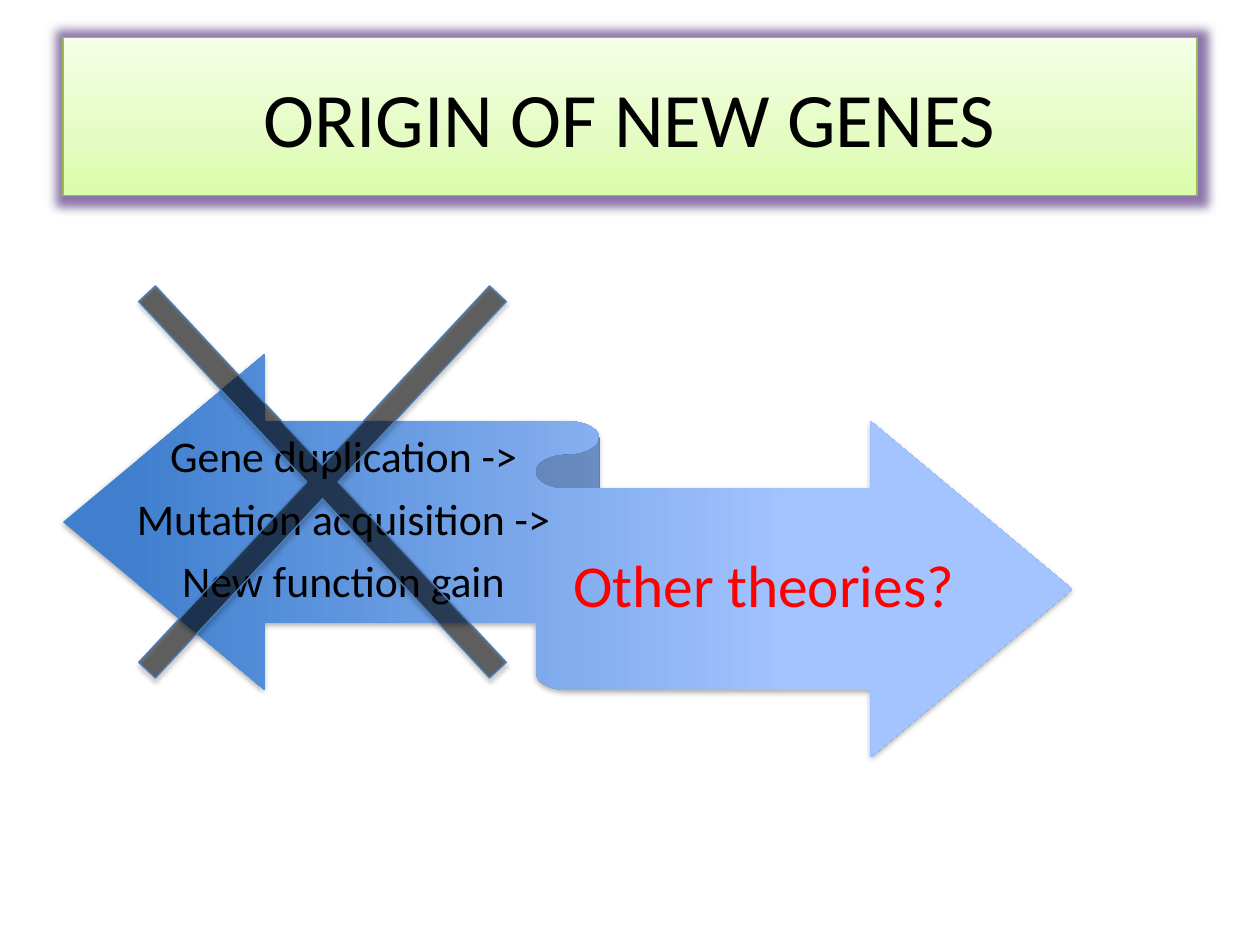
import pptx
import pptx.dml.color
import pptx.enum.shapes
import pptx.enum.text
import pptx.oxml
import pptx.oxml.ns
import pptx.util
from lxml import etree

Inches = pptx.util.Inches
Pt = pptx.util.Pt
RGBColor = pptx.dml.color.RGBColor
MSO_SHAPE = pptx.enum.shapes.MSO_SHAPE
qn = pptx.oxml.ns.qn

BLACK = RGBColor(0x00, 0x00, 0x00)
RED = RGBColor(0xFF, 0x00, 0x00)
GREEN_LINE = RGBColor(0x98, 0xB9, 0x55)
BLUE_LINE = RGBColor(0x4B, 0x7E, 0xBC)
PURPLE_GLOW = RGBColor(0x80, 0x64, 0xA2)
GREEN_STOPS = [
    (0, RGBColor(0xDA, 0xFD, 0xA7)),
    (35, RGBColor(0xE4, 0xFC, 0xC2)),
    (100, RGBColor(0xF5, 0xFF, 0xE7)),
]
BLUE_STOPS = [
    (6, RGBColor(0x3F, 0x7F, 0xCE)),
    (73, RGBColor(0xA4, 0xC4, 0xFF)),
]
SOFT_SHADOW = {"opacity": 35, "blur": 3.1, "distance": 1.8, "direction": 90}
TITLE_SHADOW = {"opacity": 15, "blur": 6, "distance": 0, "direction": 225}


def add_color(parent, color, opacity=100):
    element = etree.SubElement(parent, qn("a:srgbClr"), val=str(color))
    if opacity < 100:
        etree.SubElement(element, qn("a:alpha"), val=str(opacity * 1000))


class SlideBuilder:
    font_name = "Calibri"

    def __init__(self, slide):
        self.slide = slide

    def place(self, shape, left, top, width, height):
        box = {"left": left, "top": top, "width": width, "height": height}
        for name, length in box.items():
            setattr(shape, name, Inches(length))

    def gradient(self, shape, stops, angle):
        shape.fill.gradient()
        shape.fill.gradient_angle = angle
        stop_list = shape.element.spPr.find(".//" + qn("a:gsLst"))
        for stop in list(stop_list):
            stop_list.remove(stop)
        for position, color in stops:
            stop = etree.SubElement(stop_list, qn("a:gs"), pos=str(position * 1000))
            add_color(stop, color)

    def outline(self, shape, color):
        shape.line.color.rgb = color
        shape.line.width = Pt(0.75)

    def effects(self, shape, shadow, glow=None):
        shape.shadow.inherit = False
        effect_list = shape.element.spPr.find(qn("a:effectLst"))
        if glow:
            element = etree.SubElement(effect_list, qn("a:glow"), rad=str(Pt(11)))
            add_color(element, glow, 85)
        element = etree.SubElement(
            effect_list, qn("a:outerShdw"),
            blurRad=str(Pt(shadow["blur"])), dist=str(Pt(shadow["distance"])),
            dir=str(shadow["direction"] * 60000), rotWithShape="0")
        add_color(element, BLACK, shadow["opacity"])

    def set_text(self, shape, lines, size, color, **paragraph_format):
        frame = shape.text_frame
        frame.word_wrap = True
        frame.vertical_anchor = pptx.enum.text.MSO_ANCHOR.MIDDLE
        frame.text = "\n".join(lines)
        for paragraph in frame.paragraphs:
            paragraph.alignment = pptx.enum.text.PP_ALIGN.CENTER
            for name, value in paragraph_format.items():
                setattr(paragraph, name, value)
            for run in paragraph.runs:
                run.font.name = self.font_name
                run.font.size = Pt(size)
                run.font.color.rgb = color

    def title(self, text):
        title = self.slide.shapes.title
        self.place(title, 0.5, 0.3, 9, 1.25)
        self.gradient(title, GREEN_STOPS, 90)
        self.outline(title, GREEN_LINE)
        self.effects(title, TITLE_SHADOW, PURPLE_GLOW)
        self.set_text(title, [text], 44, BLACK)

    def ribbon(self, group, *box):
        ribbon = group.shapes.add_shape(
            MSO_SHAPE.LEFT_RIGHT_RIBBON, *map(Inches, box))
        self.gradient(ribbon, BLUE_STOPS, 0)
        ribbon.line.fill.background()
        self.effects(ribbon, SOFT_SHADOW)

    def label(self, group, box, lines, size, color, margin):
        label = group.shapes.add_textbox(*map(Inches, box))
        margins = {"margin_left": 0, "margin_right": 0,
                   "margin_top": margin, "margin_bottom": margin}
        for name, length in margins.items():
            setattr(label.text_frame, name, Inches(length))
        self.set_text(label, lines, size, color,
                      line_spacing=0.9, space_after=Pt(size * 0.35))

    def cross(self, *box):
        cross = self.slide.shapes.add_shape(
            MSO_SHAPE.MATH_MULTIPLY, *map(Inches, box))
        cross.adjustments[0] = 0.034
        cross.fill.solid()
        cross.fill.fore_color.rgb = BLACK
        color = cross.element.spPr.find(qn("a:solidFill")).find(qn("a:srgbClr"))
        etree.SubElement(color, qn("a:alpha"), val="54000")
        self.outline(cross, BLUE_LINE)
        self.effects(cross, SOFT_SHADOW)


def main():
    presentation = pptx.Presentation()
    presentation.slide_width = Inches(10)
    presentation.slide_height = Inches(7.5)
    title_only = presentation.slide_layouts[5]
    slide = presentation.slides.add_slide(title_only)
    builder = SlideBuilder(slide)

    builder.title("ORIGIN OF NEW GENES")
    theories = slide.shapes.add_group_shape()
    builder.ribbon(theories, 0.5, 2.81, 8.01, 3.2)
    builder.label(
        theories, (1.04, 3.2, 3.37, 1.87),
        ["Gene duplication ->", "Mutation acquisition ->", "New function gain"],
        25, BLACK, 0.1)
    builder.label(theories, (4.5, 3.88, 3.12, 1.57), ["Other theories?"],
                  34, RED, 0.13)
    builder.cross(-0.12, 0.95, 5.36, 5.75)
    presentation.save("out.pptx")


if __name__ == "__main__":
    main()
